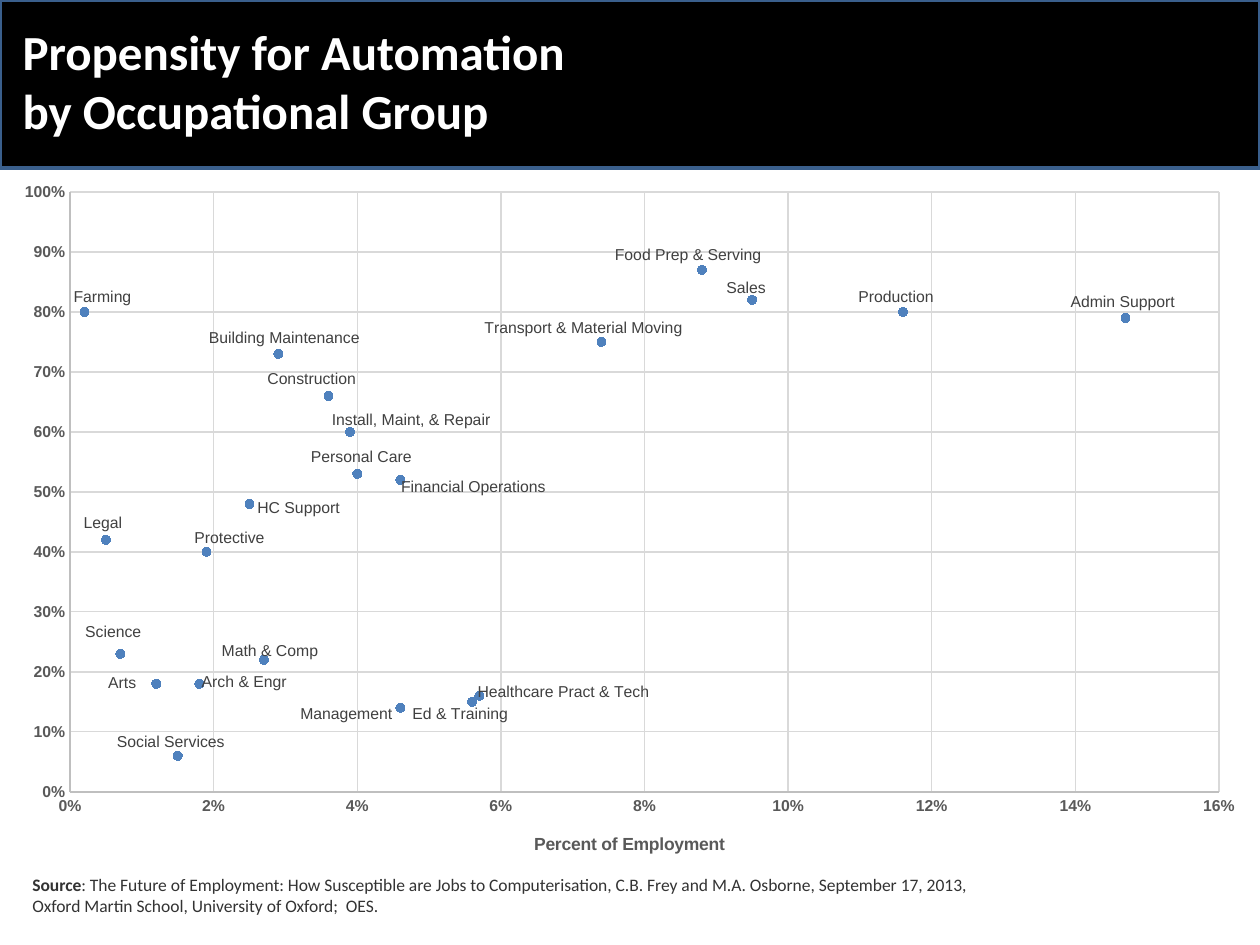
from lxml.etree import SubElement
from pptx import Presentation
from pptx.chart.data import XyChartData
from pptx.dml.color import RGBColor
from pptx.enum.chart import XL_CHART_TYPE, XL_LABEL_POSITION, XL_MARKER_STYLE, XL_TICK_MARK
from pptx.enum.shapes import MSO_SHAPE
from pptx.enum.text import MSO_ANCHOR, MSO_AUTO_SIZE, PP_ALIGN
from pptx.oxml import parse_xml
from pptx.oxml.ns import qn
from pptx.util import Pt

PX = 914400 // 126
BLACK = RGBColor(0x00, 0x00, 0x00)
WHITE = RGBColor(0xFF, 0xFF, 0xFF)
EDGE = RGBColor(0x3A, 0x5F, 0x8C)
BLUE = RGBColor(0x4F, 0x81, 0xBD)
GRID = RGBColor(0xD9, 0xD9, 0xD9)
AXIS = RGBColor(0xBF, 0xBF, 0xBF)
TICK = RGBColor(0x59, 0x59, 0x59)
LABEL = RGBColor(0x40, 0x40, 0x40)
NOTE = RGBColor(0x33, 0x33, 0x33)
WIDE, HIGH = 1260, 714  # chart size in px

# Group, share of employment, propensity, label shift from above the point in px
GROUPS = [
    ("Management", 0.046, 0.14, -54, 25),
    ("Financial Operations", 0.046, 0.52, 73, 26),
    ("Math & Comp", 0.027, 0.22, 6, 10),
    ("Arch & Engr", 0.018, 0.18, 45, 17),
    ("Science", 0.007, 0.23, -7, -3),
    ("Social Services", 0.015, 0.06, -7, 5),
    ("Legal", 0.005, 0.42, -3, 2),
    ("Ed & Training", 0.056, 0.15, -12, 31),
    ("Arts", 0.012, 0.18, -34, 18),
    ("Healthcare Pract & Tech", 0.057, 0.16, 84, 15),
    ("HC Support", 0.025, 0.48, 49, 23),
    ("Protective", 0.019, 0.40, 23, 5),
    ("Food Prep & Serving", 0.088, 0.87, -14, 4),
    ("Building Maintenance", 0.029, 0.73, 6, 3),
    ("Personal Care", 0.040, 0.53, 4, 2),
    ("Sales", 0.095, 0.82, -6, 7),
    ("Admin Support", 0.147, 0.79, -3, 3),
    ("Farming", 0.002, 0.80, 18, 4),
    ("Construction", 0.036, 0.66, -17, 2),
    ("Install, Maint, & Repair", 0.039, 0.60, 61, 7),
    ("Production", 0.116, 0.80, -7, 4),
    ("Transport & Material Moving", 0.074, 0.75, -18, 5),
]


def style(font, name, size, color, bold):
    font.name, font.size, font.bold = name, Pt(size), bold
    font.color.rgb = color


def layout(**parts):
    """Manual chart layout from element names and values."""
    node = parse_xml('<c:layout xmlns:c="http://schemas.openxmlformats.org/'
                     'drawingml/2006/chart"><c:manualLayout/></c:layout>')
    for key, val in parts.items():
        SubElement(node[0], qn("c:" + key)).set("val", str(val))
    return node


deck = Presentation()
deck.slide_width, deck.slide_height = 1260 * PX, 945 * PX
slide = deck.slides.add_slide(deck.slide_layouts[5])
shapes = slide.shapes

# Black band behind the title
band = shapes.add_shape(MSO_SHAPE.RECTANGLE, 0, 0, 1260 * PX, 168 * PX)
band.shadow.inherit = False
band.fill.solid()
band.fill.fore_color.rgb = BLACK
band.line.color.rgb = EDGE
band.line.width = Pt(2)
shapes.element.insert(2, band.element)

# Title
title = shapes.title
title.left, title.top, title.width, title.height = 10 * PX, 15 * PX, 1008 * PX, 131 * PX
frame = title.text_frame
frame.auto_size = MSO_AUTO_SIZE.NONE
frame.vertical_anchor = MSO_ANCHOR.MIDDLE
para = frame.paragraphs[0]
para.alignment = PP_ALIGN.LEFT
for i, line in enumerate(("Propensity for Automation", "by Occupational Group")):
    if i:
        para.add_line_break()
    run = para.add_run()
    run.text = line
    style(run.font, "Calibri", 28, WHITE, True)

# Scatter chart
data = XyChartData()
points = data.add_series("Series 1")
for name, share, risk, dx, dy in GROUPS:
    points.add_data_point(share, risk)
chart = shapes.add_chart(XL_CHART_TYPE.XY_SCATTER, 0, 168 * PX,
                         WIDE * PX, HIGH * PX, data).chart
chart.has_legend = chart.has_title = False
style(chart.font, "Arial", 10, BLACK, False)
plot = chart.plots[0]
plot.vary_by_categories = False
area = chart.element.xpath(".//c:plotArea")[0]
for old in area.xpath("./c:layout"):
    area.remove(old)
area.insert(0, layout(layoutTarget="inner", xMode="edge", yMode="edge",
                      x=round(70 / WIDE, 4), y=round(24 / HIGH, 4),
                      w=round(1149 / WIDE, 4), h=round(600 / HIGH, 4)))

# Axes
for axis, top, step in ((chart.category_axis, 0.16, 0.02), (chart.value_axis, 1, 0.1)):
    axis.minimum_scale, axis.maximum_scale, axis.major_unit = 0, top, step
    axis.major_tick_mark = axis.minor_tick_mark = XL_TICK_MARK.NONE
    axis.has_major_gridlines = True
    for rule, color in ((axis.major_gridlines.format.line, GRID), (axis.format.line, AXIS)):
        rule.color.rgb = color
        rule.width = Pt(0.75)
    axis.tick_labels.number_format = "0%"
    axis.tick_labels.number_format_is_linked = False
    style(axis.tick_labels.font, "Arial", 9, TICK, True)
run = chart.category_axis.axis_title.text_frame.paragraphs[0].add_run()
run.text = "Percent of Employment"
style(run.font, "Arial", 10, TICK, True)
head = chart.element.xpath(".//c:valAx/c:title")[0]
for old in head.xpath("./c:layout"):
    head.remove(old)
head.xpath("./c:tx")[0].addnext(layout(xMode="edge", yMode="edge",
                                       x=round(531 / WIDE, 4), y=round(661 / HIGH, 4)))

# Markers and labels
series = plot.series[0]
series.format.line.fill.background()
mark = series.marker
mark.style, mark.size = XL_MARKER_STYLE.CIRCLE, 5
mark.format.fill.solid()
mark.format.fill.fore_color.rgb = BLUE
mark.format.line.color.rgb = BLUE
for i, (name, share, risk, dx, dy) in enumerate(GROUPS):
    label = series.points[i].data_label
    run = label.text_frame.paragraphs[0].add_run()
    run.text = name
    style(run.font, "Arial", 9, LABEL, False)
    label.position = XL_LABEL_POSITION.ABOVE
for node, (name, share, risk, dx, dy) in zip(chart.element.xpath(".//c:dLbl"), GROUPS):
    node.insert(1, layout(x=round(dx / WIDE, 4), y=round(dy / HIGH, 4)))
for lead in chart.element.xpath(".//c:showLeaderLines"):
    lead.set("val", "0")

# Source note
note = shapes.add_textbox(20 * PX, 866 * PX, 1271 * PX, 58 * PX).text_frame
note.word_wrap = False
note.vertical_anchor = MSO_ANCHOR.MIDDLE
lines = [
    [("Source", True),
     (": The Future of Employment: How Susceptible are Jobs to Computerisation, "
      "C.B. Frey and M.A. Osborne, September 17, 2013,", False)],
    [("Oxford Martin School, University of Oxford;  OES.", False)],
]
for i, line in enumerate(lines):
    para = note.add_paragraph() if i else note.paragraphs[0]
    for text, bold in line:
        run = para.add_run()
        run.text = text
        style(run.font, "Calibri", 10, NOTE, bold)

deck.save("out.pptx")
